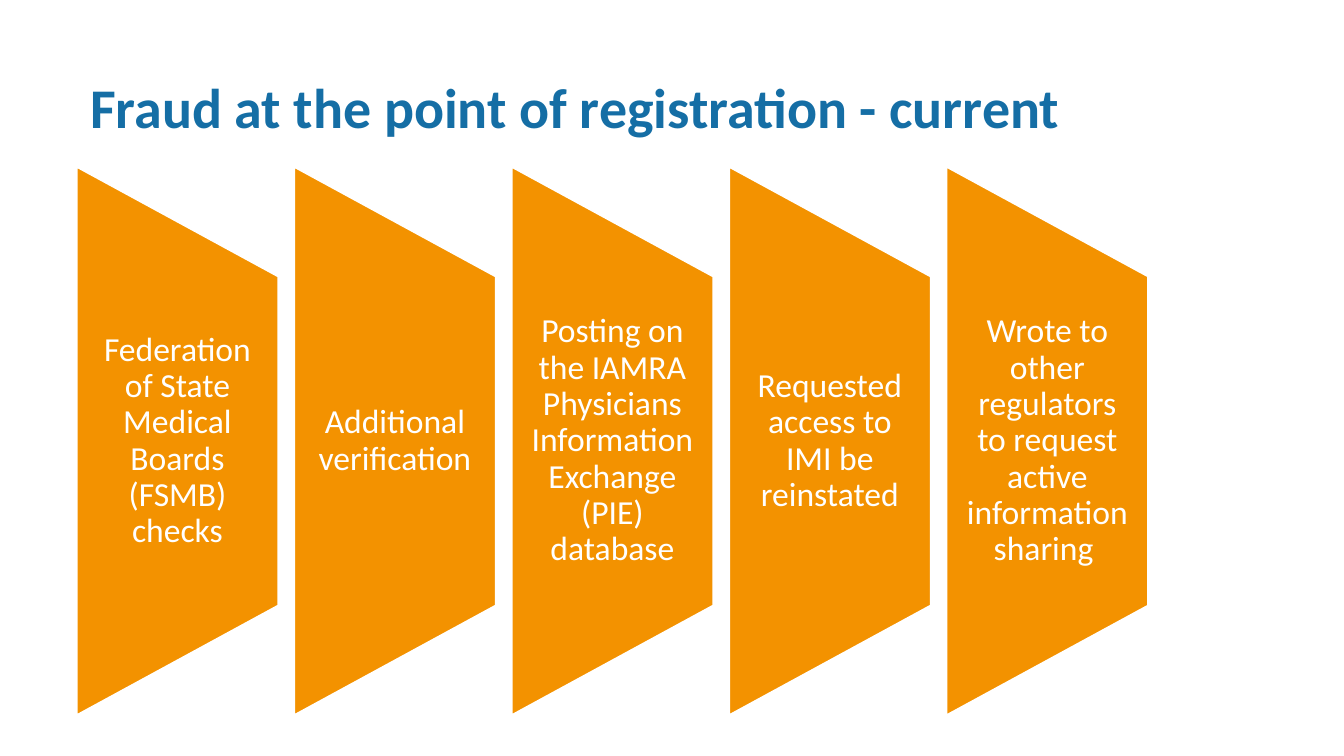
"""Build the slide on current steps against fraud at registration."""
import pptx
import pptx.dml.color
import pptx.enum.shapes
import pptx.enum.text
import pptx.util

Cm = pptx.util.Cm
Pt = pptx.util.Pt
RGBColor = pptx.dml.color.RGBColor
ANCHOR = pptx.enum.text.MSO_ANCHOR
ALIGN = pptx.enum.text.PP_ALIGN

BLUE = RGBColor(0x15, 0x6E, 0xA5)
ORANGE = RGBColor(0xF3, 0x92, 0x00)
WHITE = RGBColor(0xFF, 0xFF, 0xFF)

LEFT, PITCH = 1.45, 4.11
STEP_W, STEP_H, STEP_TOP = 3.81, 10.36, 3.15
LABEL_H = 6.22

TITLE = "Fraud at the point of registration - current"
STEPS = [
    "Federation of State Medical Boards (FSMB) checks",
    "Additional verification",
    "Posting on the IAMRA Physicians Information Exchange (PIE) database",
    "Requested access to IMI be reinstated",
    "Wrote to other regulators to request active information sharing ",
]

TITLE_FONT = {"name": "Calibri", "size": Pt(30), "bold": True}
LABEL_FONT = {"name": "Calibri", "size": Pt(18)}
TITLE_PARAGRAPH = {"alignment": ALIGN.LEFT, "line_spacing": 0.9}
LABEL_PARAGRAPH = {"alignment": ALIGN.CENTER, "line_spacing": 0.9}
TITLE_FRAME = {"word_wrap": True, "vertical_anchor": ANCHOR.MIDDLE,
               "auto_size": pptx.enum.text.MSO_AUTO_SIZE.NONE}
LABEL_FRAME = {**TITLE_FRAME, "margin_left": Cm(0.3), "margin_right": Cm(0.3),
               "margin_top": 0, "margin_bottom": 0}


def apply(obj, values):
    """Set each named attribute of an object."""
    for name, value in values.items():
        setattr(obj, name, value)


def write(tf, text, frame, paragraph, font, color):
    """Fill a text frame with one formatted paragraph."""
    apply(tf, frame)
    p = tf.paragraphs[0]
    apply(p, paragraph)
    r = p.add_run()
    r.text = text
    apply(r.font, font)
    r.font.color.rgb = color


def add_title(s, text):
    """Place and format the title placeholder."""
    sp = s.shapes.title
    apply(sp, {"left": Cm(LEFT), "top": Cm(1.42), "width": Cm(19.05), "height": Cm(1.32)})
    write(sp.text_frame, text, TITLE_FRAME, TITLE_PARAGRAPH, TITLE_FONT, BLUE)


def add_step(s, left, text):
    """Draw one tapering panel, turned on its side, with an upright label."""
    middle_x, middle_y = left + STEP_W / 2, STEP_TOP + STEP_H / 2
    sp = s.shapes.add_shape(
        pptx.enum.shapes.MSO_SHAPE.FLOWCHART_MANUAL_OPERATION,
        Cm(middle_x - STEP_H / 2), Cm(middle_y - STEP_W / 2), Cm(STEP_H), Cm(STEP_W))
    sp.rotation = 270
    sp.shadow.inherit = False
    sp.fill.solid()
    sp.fill.fore_color.rgb = ORANGE
    sp.line.color.rgb = WHITE
    sp.line.width = Pt(1)
    label = s.shapes.add_textbox(
        Cm(left), Cm(middle_y - LABEL_H / 2), Cm(STEP_W), Cm(LABEL_H))
    write(label.text_frame, text, LABEL_FRAME, LABEL_PARAGRAPH, LABEL_FONT, WHITE)


def main():
    """Create the presentation and save it."""
    prs = pptx.Presentation()
    apply(prs, {"slide_width": Cm(25.4), "slide_height": Cm(14.28)})
    s = prs.slides.add_slide(prs.slide_layouts.get_by_name("Title Only"))
    add_title(s, TITLE)
    for i, text in enumerate(STEPS):
        add_step(s, LEFT + i * PITCH, text)
    prs.save("out.pptx")


if __name__ == "__main__":
    main()
